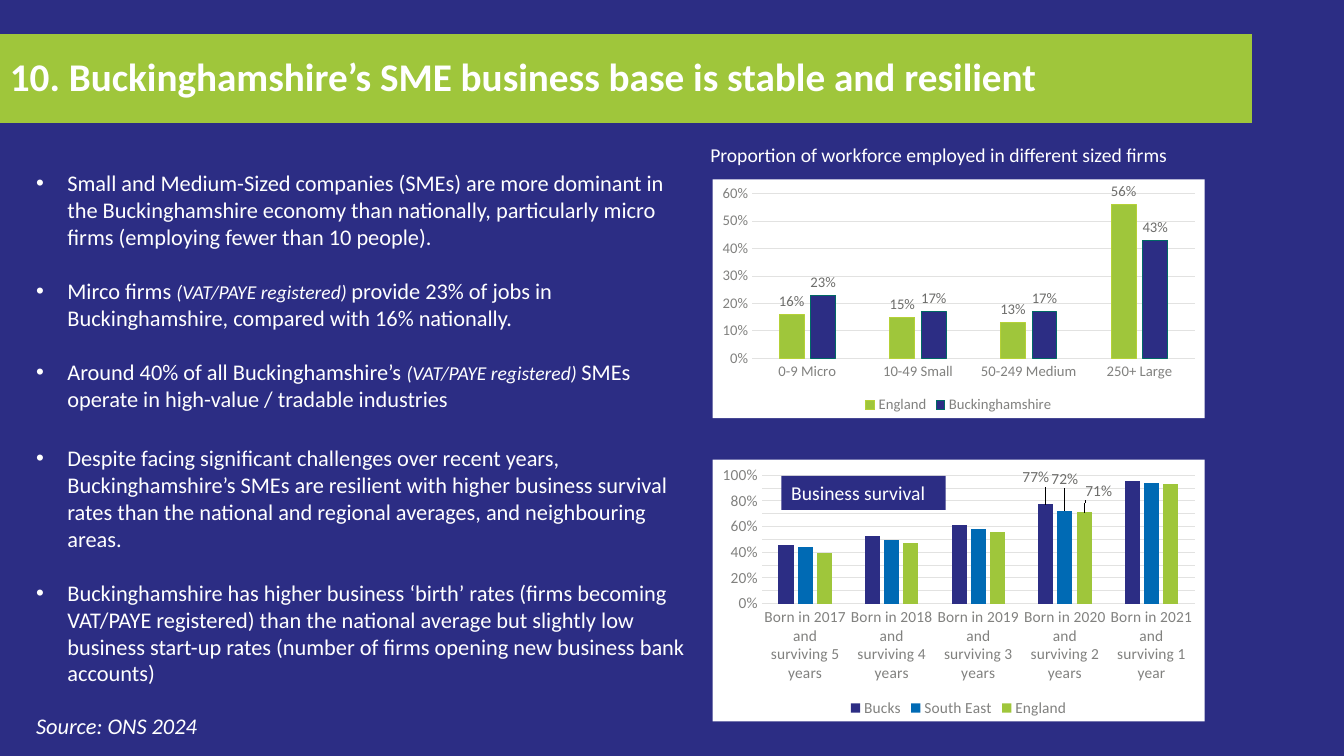
from dataclasses import dataclass

from lxml import etree
from pptx import Presentation
from pptx.chart.data import CategoryChartData
from pptx.dml.color import RGBColor
from pptx.enum.chart import (XL_CHART_TYPE, XL_LABEL_POSITION,
                             XL_LEGEND_POSITION, XL_TICK_MARK)
from pptx.enum.shapes import MSO_SHAPE
from pptx.enum.text import MSO_ANCHOR, PP_ALIGN
from pptx.oxml import parse_xml
from pptx.oxml.ns import nsdecls, qn
from pptx.util import Cm, Pt

COLUMN = XL_CHART_TYPE.COLUMN_CLUSTERED
OUTSIDE = XL_LABEL_POSITION.OUTSIDE_END
BOTTOM = XL_LEGEND_POSITION.BOTTOM
NO_TICK = XL_TICK_MARK.NONE
RECT = MSO_SHAPE.RECTANGLE
TOP, MIDDLE = MSO_ANCHOR.TOP, MSO_ANCHOR.MIDDLE
LEFT = PP_ALIGN.LEFT


@dataclass(frozen=True)
class Theme:
    face: str = "Calibri"
    navy: str = "2C2D84"
    green: str = "9FC63B"
    blue: str = "006AB4"
    white: str = "FFFFFF"
    grid: str = "E2E2E1"
    axis: str = "81817F"
    label: str = "6D6D6B"
    lime: str = "B5D137"
    teal: str = "006965"
    title: float = 28
    body: float = 16
    small: float = 14


THEME = Theme()


@dataclass(frozen=True)
class Run:
    text: str
    size: float = THEME.body
    bold: bool = False
    italic: bool = False


@dataclass(frozen=True)
class Box:
    at: tuple[float, ...]
    paras: list[list[Run]]
    fill: str | None = None
    bullet: bool = False
    anchor: MSO_ANCHOR = TOP
    format: dict | None = None


@dataclass(frozen=True)
class Series:
    name: str
    vals: tuple[float, ...]
    fill: str
    line: str | None = None
    shift: tuple[float, float] | None = None


@dataclass(frozen=True)
class Graph:
    at: tuple[float, ...]
    size: float
    cats: list[str]
    series: list[Series]
    plot: tuple[float, ...]
    scale: dict


NOTE = Run("(VAT/PAYE registered) ", THEME.small, italic=True)
BOXES = [
    Box((0, 0.86, 31.55, 2.24), [[Run(
        "10. Buckinghamshire’s SME business base is stable and resilient",
        THEME.title, bold=True)]], THEME.green, anchor=MIDDLE,
        format={"line_spacing": 0.9}),
    Box((0.66, 4.14, 16.87, 6.4), [
        [Run("Small and Medium-Sized companies (SMEs) are more dominant in the "
             "Buckinghamshire economy than nationally, particularly micro firms "
             "(employing fewer than 10 people).")],
        [Run("Mirco firms "), NOTE,
         Run("provide 23% of jobs in Buckinghamshire, compared with 16% nationally.")],
        [Run("Around 40% of all Buckinghamshire’s "), NOTE,
         Run("SMEs operate in high-value / tradable industries")],
    ], THEME.navy, bullet=True),
    Box((0.66, 11.07, 16.87, 6.4), [
        [Run("Despite facing significant challenges over recent years, "
             "Buckinghamshire’s SMEs are resilient with higher business survival "
             "rates than the national and regional averages, and neighbouring areas.")],
        [Run("Buckinghamshire has higher business ‘birth’ rates (firms becoming "
             "VAT/PAYE registered) than the national average but slightly low "
             "business start-up rates (number of firms opening new business bank "
             "accounts)")],
    ], THEME.navy, bullet=True),
    Box((0.66, 17.81, 5.79, 0.94), [[Run("Source: ONS 2024", italic=True)]]),
    Box((17.65, 3.38, 13.89, 0.91), [[Run(
        "Proportion of workforce employed in different sized firms", THEME.small)]],
        format={"line_spacing": 1.15, "space_after": Pt(8)}),
    Box((19.69, 11.99, 4.14, 0.86), [[Run("Business survival", THEME.small)]],
        THEME.navy),
]
SPANS = [(2017, "5 years"), (2018, "4 years"), (2019, "3 years"),
         (2020, "2 years"), (2021, "1 year")]
MARKED = 3
GRAPHS = [
    Graph((17.96, 4.52, 12.4, 6.02), 10.5,
          ["0-9 Micro", "10-49 Small", "50-249 Medium", "250+ Large"], [
              Series("England", (0.16, 0.15, 0.13, 0.56), THEME.green, THEME.lime),
              Series("Buckinghamshire", (0.23, 0.17, 0.17, 0.43), THEME.navy,
                     THEME.teal)],
          (0.08, 0.06, 0.9, 0.69),
          {"minimum_scale": 0, "maximum_scale": 0.6, "major_unit": 0.1}),
    Graph((17.96, 11.58, 12.4, 6.6), 11,
          [f"Born in {year} and surviving {span}" for year, span in SPANS], [
              Series("Bucks", (0.456, 0.525, 0.609, 0.774, 0.953), THEME.navy,
                     shift=(-0.02, -0.05)),
              Series("South East", (0.439, 0.499, 0.584, 0.723, 0.94), THEME.blue,
                     shift=(0, -0.07)),
              Series("England", (0.394, 0.472, 0.559, 0.711, 0.935), THEME.green,
                     shift=(0.03, -0.03))],
          (0.1, 0.06, 0.88, 0.49),
          {"minimum_scale": 0, "maximum_scale": 1, "major_unit": 0.1}),
]


def apply(item, values: dict) -> None:
    for name, value in values.items():
        setattr(item, name, value)


def style(font, size: float, tint: str, **extra) -> None:
    apply(font, {"name": THEME.face, "size": Pt(size), **extra})
    font.color.rgb = RGBColor.from_string(tint)


def paint(fill, tint: str) -> None:
    fill.solid()
    fill.fore_color.rgb = RGBColor.from_string(tint)


def stroke(line, tint: str) -> None:
    paint(line.fill, tint)
    line.width = Pt(0.75)


def layout(**values) -> etree._Element:
    """Build a manual chart layout from fractions of the chart size."""
    tags = "".join(f'<c:{key} val="{value}"/>' for key, value in values.items())
    return parse_xml(f'<c:layout {nsdecls("c")}><c:manualLayout>{tags}'
                     '</c:manualLayout></c:layout>')


def draw_box(slide, box: Box) -> None:
    at = [Cm(value) for value in box.at]
    if box.fill:
        shape = slide.shapes.add_shape(RECT, *at)
        shape.shadow.inherit = False
        paint(shape.fill, box.fill)
        shape.line.fill.background()
    else:
        shape = slide.shapes.add_textbox(*at)
    frame = shape.text_frame
    apply(frame, {"word_wrap": True, "vertical_anchor": box.anchor})
    for index, runs in enumerate(box.paras):
        para = frame.add_paragraph() if index else frame.paragraphs[0]
        if box.bullet:
            props = para._p.get_or_add_pPr()
            apply_indent = {"marL": Cm(0.79), "indent": -Cm(0.79)}
            for key, value in apply_indent.items():
                props.set(key, str(value))
            etree.SubElement(props, qn("a:buFont"), typeface="Arial")
            etree.SubElement(props, qn("a:buChar"), char="•")
        apply(para, {"alignment": LEFT, **(box.format or {})})
        if index:
            para.space_before = Pt(19.5)
        for part in runs:
            run = para.add_run()
            run.text = part.text
            style(run.font, part.size, THEME.white, bold=part.bold, italic=part.italic)


def mark(series, shift: tuple[float, float], size: float) -> None:
    """Label one point, moved off its column and tied to it by a line."""
    label = series.points[MARKED].data_label
    style(label.font, size, THEME.label)
    label.position = OUTSIDE
    labels = series.data_labels
    apply(labels, {"show_value": False, "number_format": "0%",
                   "number_format_is_linked": False})
    root = labels._element
    root.find(f'{qn("c:dLbl")}/{qn("c:idx")}').addnext(layout(x=shift[0], y=shift[1]))
    root.append(parse_xml(
        f'<c:extLst {nsdecls("c")}><c:ext uri="{{CE6537A1-D6FC-4f65-9D91-7224C49458BB}}" '
        'xmlns:c15="http://schemas.microsoft.com/office/drawing/2012/chart">'
        '<c15:showLeaderLines val="1"/></c:ext></c:extLst>'))


def draw_graph(slide, graph: Graph) -> None:
    data = CategoryChartData(number_format="0%")
    data.categories = graph.cats
    for item in graph.series:
        data.add_series(item.name, item.vals)
    chart = slide.shapes.add_chart(COLUMN, *map(Cm, graph.at), data).chart
    style(chart.font, graph.size, THEME.axis)
    apply(chart, {"has_title": False, "has_legend": True})
    apply(chart.legend, {"position": BOTTOM, "include_in_layout": False})
    style(chart.legend.font, graph.size, THEME.axis)
    for axis in (chart.category_axis, chart.value_axis):
        apply(axis, {"major_tick_mark": NO_TICK, "minor_tick_mark": NO_TICK})
        style(axis.tick_labels.font, graph.size, THEME.axis)
    stroke(chart.category_axis.format.line, THEME.grid)
    rise = chart.value_axis
    apply(rise, {"has_major_gridlines": True, **graph.scale})
    stroke(rise.major_gridlines.format.line, THEME.grid)
    rise.format.line.fill.background()
    apply(rise.tick_labels, {"number_format": "0%", "number_format_is_linked": False})
    plot = chart.plots[0]
    apply(plot, {"gap_width": 219, "overlap": -27, "vary_by_categories": False})
    for item, series in zip(graph.series, plot.series):
        paint(series.format.fill, item.fill)
        if item.line:
            stroke(series.format.line, item.line)
        if item.shift:
            mark(series, item.shift, graph.size)
        else:
            labels = series.data_labels
            apply(labels, {"show_value": True, "position": OUTSIDE,
                           "number_format": "0%", "number_format_is_linked": False})
            style(labels.font, graph.size, THEME.label)
    area = chart.element.find(f'{qn("c:chart")}/{qn("c:plotArea")}')
    for old in area.findall(qn("c:layout")):
        area.remove(old)
    x, y, w, h = graph.plot
    area.insert(0, layout(layoutTarget="inner", xMode="edge", yMode="edge",
                          x=x, y=y, w=w, h=h))
    area.getparent().addnext(parse_xml(
        f'<c:spPr {nsdecls("c", "a")}><a:solidFill><a:srgbClr val="{THEME.white}"/>'
        '</a:solidFill><a:ln><a:noFill/></a:ln></c:spPr>'))


def main() -> None:
    deck = Presentation()
    apply(deck, {"slide_width": Cm(33.87), "slide_height": Cm(19.05)})
    slide = deck.slides.add_slide(deck.slide_layouts[6])
    paint(slide.background.fill, THEME.navy)
    for graph in GRAPHS:
        draw_graph(slide, graph)
    for box in BOXES:
        draw_box(slide, box)
    deck.save("out.pptx")


if __name__ == "__main__":
    main()
